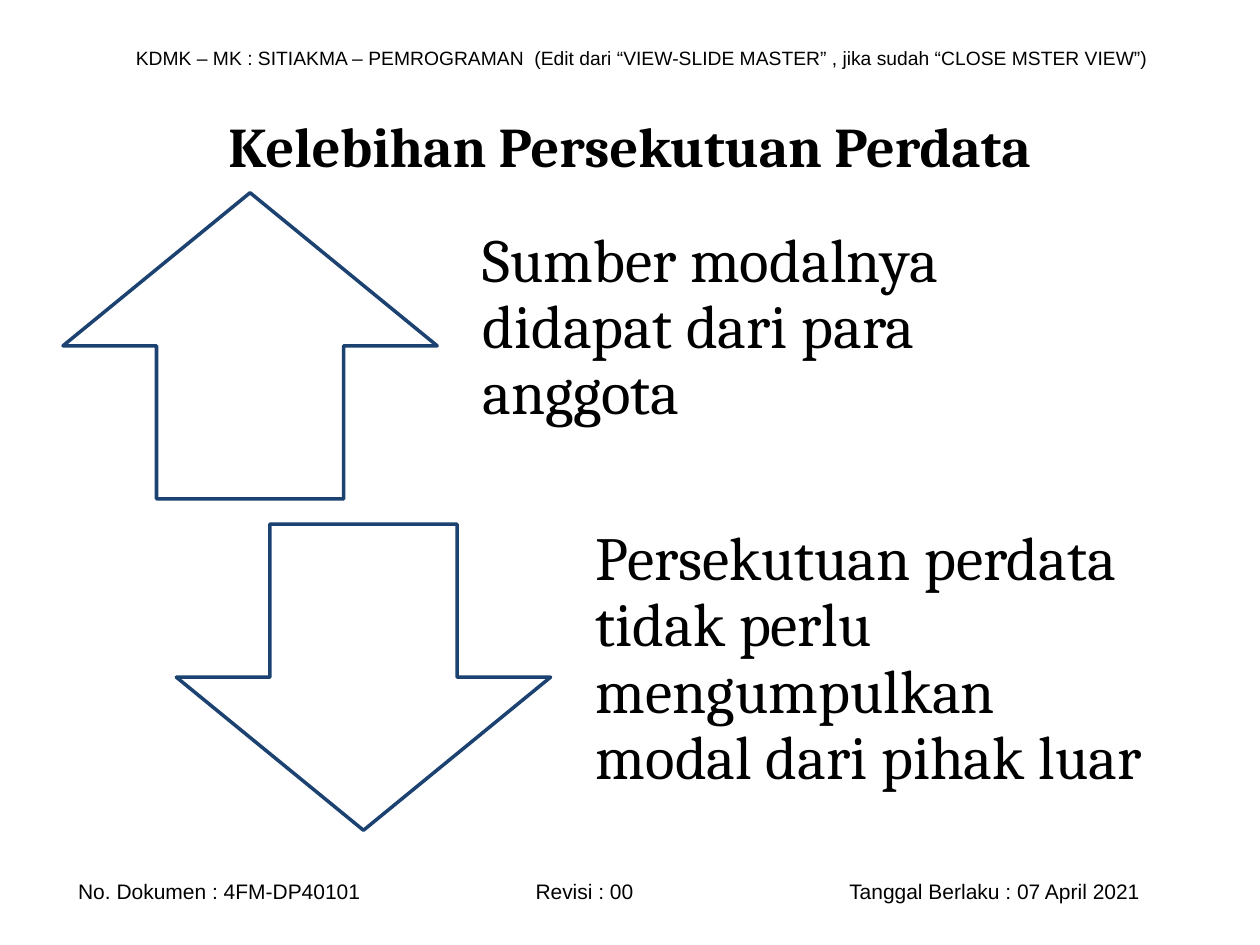
"""Build the slide on the advantages of a civil partnership."""
from lxml import etree
from pptx import Presentation
from pptx.dml.color import RGBColor
from pptx.enum.shapes import MSO_SHAPE
from pptx.enum.text import MSO_ANCHOR, PP_ALIGN
from pptx.oxml.ns import qn
from pptx.util import Inches, Pt

UP, DOWN = MSO_SHAPE.UP_ARROW, MSO_SHAPE.DOWN_ARROW
MIDDLE = MSO_ANCHOR.MIDDLE
LEFT, CENTER = PP_ALIGN.LEFT, PP_ALIGN.CENTER
COLORS = {"text": "000000", "fill": "FFFFFF", "outline": "1C4271"}


def write_text(box, text, font="Arial", size=12, bold=False, align=LEFT,
               spacing=1.0, insets=(0.1, 0.05, 0.1, 0.05), tabs=()):
    frame = box.text_frame
    frame.word_wrap = True
    frame.vertical_anchor = MIDDLE
    (frame.margin_left, frame.margin_top,
     frame.margin_right, frame.margin_bottom) = map(Inches, insets)
    para = frame.paragraphs[0]
    para.alignment = align
    para.line_spacing = spacing
    if tabs:
        tab_list = etree.SubElement(para._p.get_or_add_pPr(), qn("a:tabLst"))
        for stop in tabs:
            etree.SubElement(tab_list, qn("a:tab"), pos=str(Inches(stop)), algn="l")
    span = para.add_run()
    span.text = text
    span.font.name = font
    span.font.size = Pt(size)
    span.font.bold = bold
    span.font.color.rgb = RGBColor.from_string(COLORS["text"])


deck = Presentation()
deck.slide_width, deck.slide_height = Inches(10), Inches(7.5)
page = deck.slides.add_slide(deck.slide_layouts[5])

header = page.shapes.add_textbox(Inches(0.98), Inches(0.31), Inches(8.35), Inches(0.29))
write_text(header, "KDMK – MK : SITIAKMA – PEMROGRAMAN  (Edit dari “VIEW-SLIDE MASTER” , "
           "jika sudah “CLOSE MSTER VIEW”)", size=11)

footer = page.shapes.add_textbox(Inches(0.2), Inches(6.92), Inches(9.45), Inches(0.3))
write_text(footer, "No. Dokumen : 4FM-DP40101\tRevisi : 00\tTanggal Berlaku : 07 April 2021",
           insets=(0.42, 0.05, 0.1, 0.05), tabs=(3.63, 6.12))

title = page.shapes.title
title.left, title.top = Inches(0.5), Inches(0.53)
title.width, title.height = Inches(9), Inches(1.25)
write_text(title, "Kelebihan Persekutuan Perdata", font="Cambria", size=32,
           bold=True, align=CENTER)

advantages = [
    (UP, 0.5, 1.53, "Sumber modalnya didapat dari para anggota"),
    (DOWN, 1.4, 4.16, "Persekutuan perdata tidak perlu mengumpulkan modal dari pihak luar"),
]
for kind, left, top, text in advantages:
    arrow = page.shapes.add_shape(kind, Inches(left), Inches(top), Inches(2.97), Inches(2.43))
    arrow.shadow.inherit = False
    arrow.fill.solid()
    arrow.fill.fore_color.rgb = RGBColor.from_string(COLORS["fill"])
    arrow.line.color.rgb = RGBColor.from_string(COLORS["outline"])
    arrow.line.width = Pt(2)
    box = page.shapes.add_textbox(Inches(left + 3.06), Inches(top), Inches(5.04), Inches(2.43))
    write_text(box, text, font="Cambria", size=35, spacing=0.9, insets=(0.27, 0, 0.27, 0.27))

deck.save("out.pptx")
